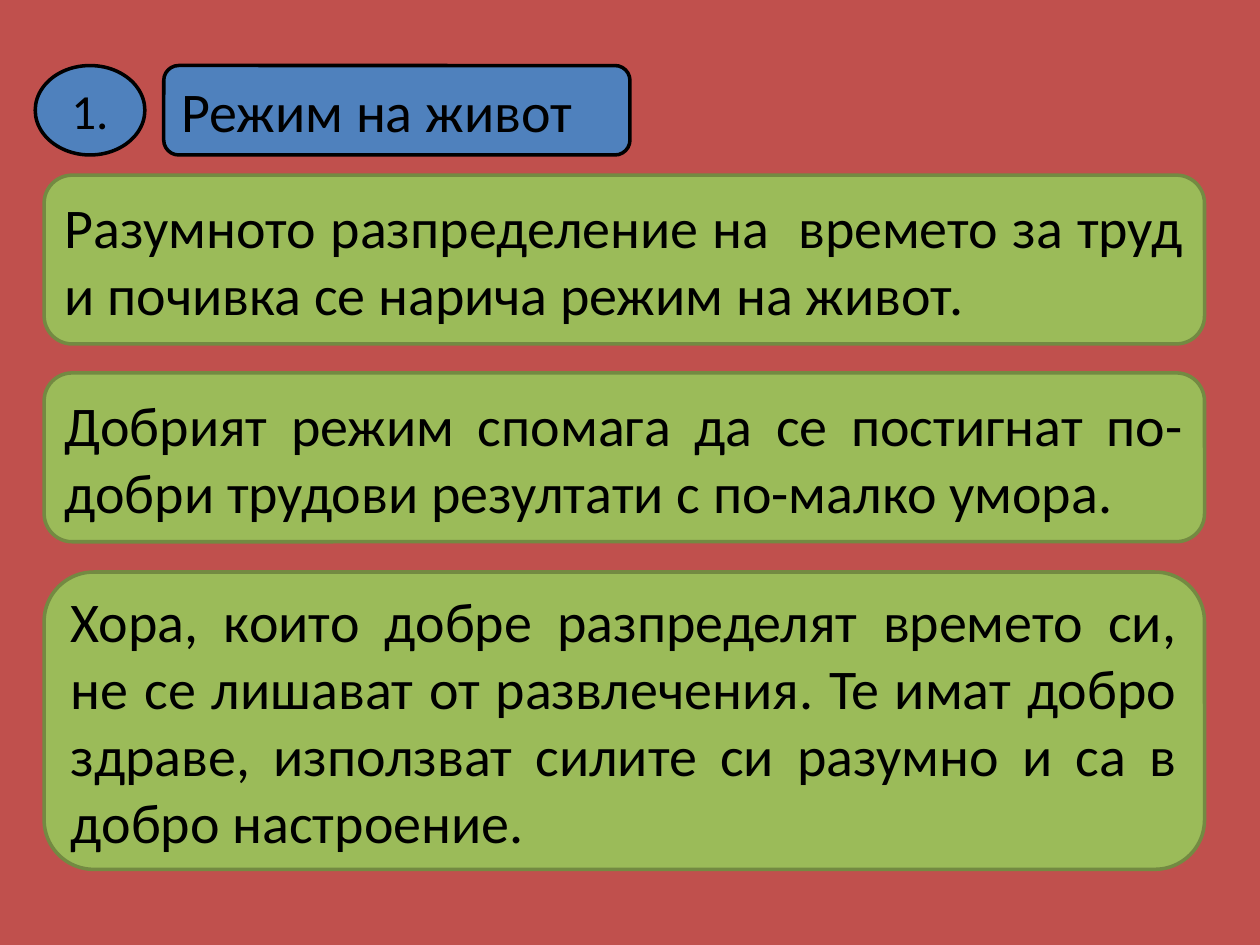
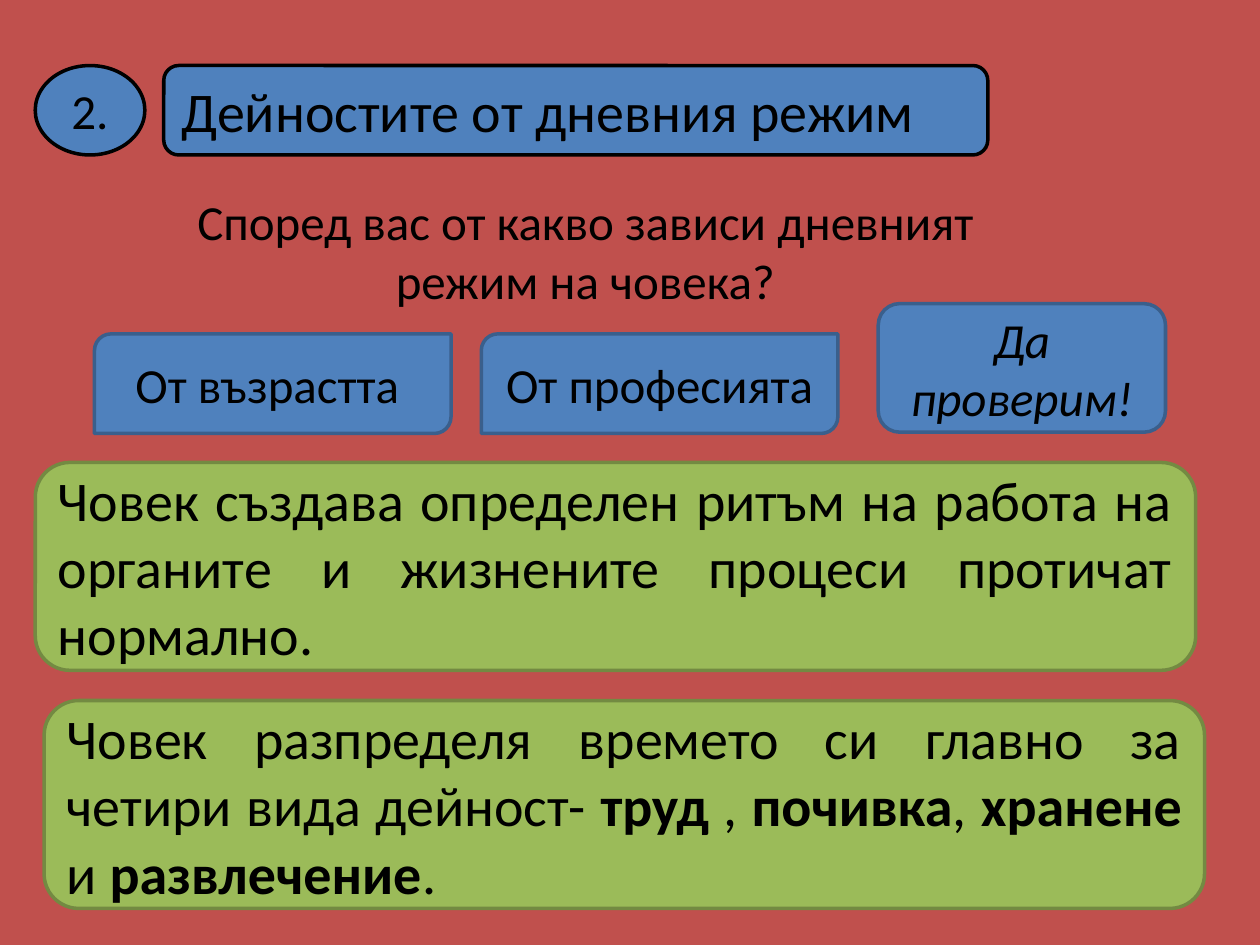
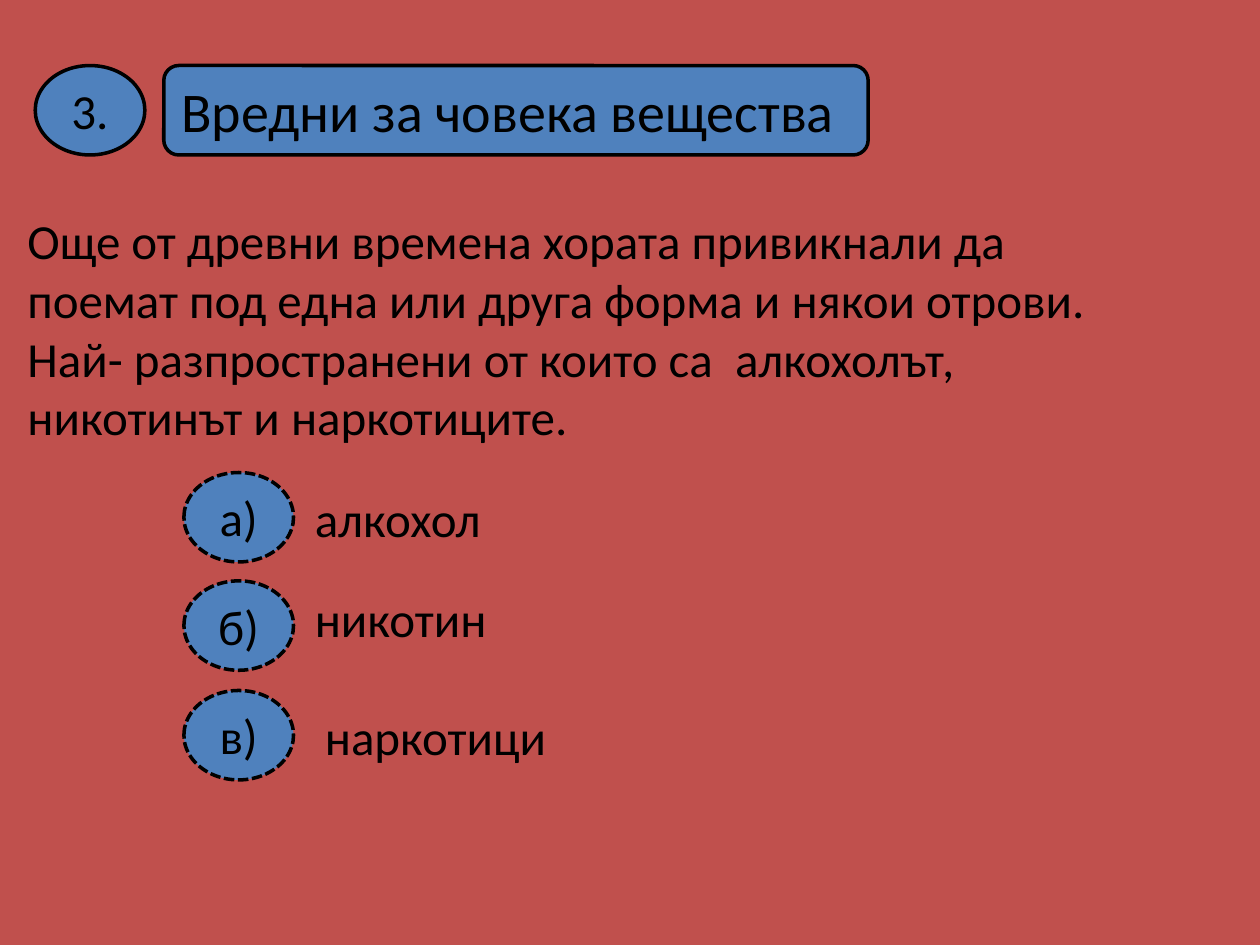
"""Builds three lesson slides about daily routine and harmful substances."""
from pptx import Presentation
from pptx.dml.color import RGBColor
from pptx.enum.dml import MSO_LINE
from pptx.enum.shapes import MSO_SHAPE as SHAPE
from pptx.enum.text import MSO_ANCHOR, MSO_AUTO_SIZE, PP_ALIGN
from pptx.util import Emu, Pt

PX = 9144
COLORS = {
    "background": "C0504D",
    "blue": "4F81BD",
    "blue_line": "3A5F8C",
    "green": "9BBB59",
    "green_line": "738A42",
    "black": "000000",
}
RGB = {name: RGBColor.from_string(value) for name, value in COLORS.items()}
LEFT, CENTER, JUSTIFY = PP_ALIGN.LEFT, PP_ALIGN.CENTER, PP_ALIGN.JUSTIFY
OVAL_W, BAND_H = 87, 71


def write(tf, lines, size, align):
    """Fill a text frame with lines, each a list of runs; odd runs are bold."""
    tf.word_wrap = True
    for i, runs in enumerate(lines):
        p = tf.paragraphs[0] if i == 0 else tf.add_paragraph()
        p.alignment = align
        p.font.name, p.font.size = "Calibri", Pt(size)
        p.font.color.rgb = RGB["black"]
        for j, text in enumerate(runs):
            r = p.add_run()
            r.text = text
            if j % 2:
                r.font.bold = True


def add_box(slide, kind, box, fill, line, runs=(), size=28, align=CENTER):
    """Add a filled, outlined shape with one paragraph of text."""
    sp = slide.shapes.add_shape(kind, *[Emu(v * PX) for v in box])
    sp.shadow.inherit = False
    sp.fill.solid()
    sp.fill.fore_color.rgb = RGB[fill]
    sp.line.color.rgb = RGB[line]
    sp.line.width = Pt(2)
    sp.text_frame.vertical_anchor = MSO_ANCHOR.MIDDLE
    write(sp.text_frame, [runs], size, align)
    return sp


prs = Presentation()
prs.slide_width, prs.slide_height = Emu(1000 * PX), Emu(750 * PX)
background = prs.slide_master.background.fill
background.solid()
background.fore_color.rgb = RGB["background"]

headings = [
    ("Режим на живот", 370),
    ("Дейностите от дневния режим", 654),
    ("Вредни за човека вещества", 559),
]
slides = []
for number, (heading, width) in enumerate(headings, 1):
    slide = prs.slides.add_slide(prs.slide_layouts[5])
    band = add_box(slide, SHAPE.ROUNDED_RECTANGLE, (130, 52, width, BAND_H), "blue", "black")
    title = slide.shapes.title
    band.element.addnext(title.element)
    title.left, title.top = Emu(134 * PX), Emu(52 * PX)
    title.width, title.height = Emu((width - 8) * PX), Emu(BAND_H * PX)
    title.text_frame.auto_size = MSO_AUTO_SIZE.NONE
    title.text_frame.vertical_anchor = MSO_ANCHOR.MIDDLE
    write(title.text_frame, [[heading]], 32, LEFT)
    add_box(slide, SHAPE.OVAL, (28, 52, OVAL_W, BAND_H), "blue", "black", [f"{number}."])
    slides.append(slide)
routine, activities, substances = slides

statements = [
    (routine, 35, 139, 134, ["Разумното разпределение на  времето за труд и почивка се нарича режим на живот."]),
    (routine, 35, 296, 134, ["Добрият режим спомага да се постигнат по-добри трудови резултати с по-малко умора."]),
    (routine, 35, 454, 236, ["Хора, които добре разпределят времето си, не се лишават от развлечения. "
                             "Те имат добро здраве, използват силите си разумно и са в добро настроение."]),
    (activities, 28, 367, 165, ["Човек създава определен ритъм на работа на органите и жизнените процеси "
                                "протичат нормално."]),
    (activities, 35, 556, 165, ["Човек разпределя времето си главно за четири вида дейност- ", "труд ", ", ",
                                "почивка", ", ", "хранене ", "и ", "развлечение", "."]),
]
for slide, x, y, height, runs in statements:
    add_box(slide, SHAPE.ROUNDED_RECTANGLE, (x, y, 921, height), "green", "green_line", runs, 32, JUSTIFY)

for x, factor in [(75, "От възрастта "), (382, "От професията")]:
    add_box(activities, SHAPE.ROUND_2_DIAG_RECTANGLE, (x, 265, 283, 79), "blue", "blue_line", [factor])
check = add_box(activities, SHAPE.FLOWCHART_ALTERNATE_PROCESS, (697, 241, 228, 102),
                "blue", "blue_line", ["Да проверим!"])
check.text_frame.paragraphs[0].font.italic = True

for i, letter in enumerate("абв"):
    oval = add_box(substances, SHAPE.OVAL, (146, 375 + round(86.5 * i), OVAL_W, BAND_H),
                   "blue", "black", [f"{letter})"])
    oval.line.dash_style = MSO_LINE.SQUARE_DOT

notes = [
    (activities, (130, 147, 669, 104), CENTER, [["Според вас от какво зависи дневният режим на човека?"]]),
    (substances, (12, 162, 913, 199), LEFT, [
        ["Още от древни времена хората привикнали да поемат под една или друга форма и някои отрови."],
        ["Най- разпространени от които са  алкохолът, никотинът и наркотиците."],
    ]),
    (substances, (240, 383, 153, 57), LEFT, [["алкохол"]]),
    (substances, (240, 462, 165, 57), LEFT, [["никотин"]]),
    (substances, (248, 556, 228, 57), LEFT, [["наркотици"]]),
]
for slide, box, align, lines in notes:
    tf = slide.shapes.add_textbox(*[Emu(v * PX) for v in box]).text_frame
    tf.auto_size = MSO_AUTO_SIZE.SHAPE_TO_FIT_TEXT
    write(tf, lines, 28, align)

prs.save("out.pptx")
